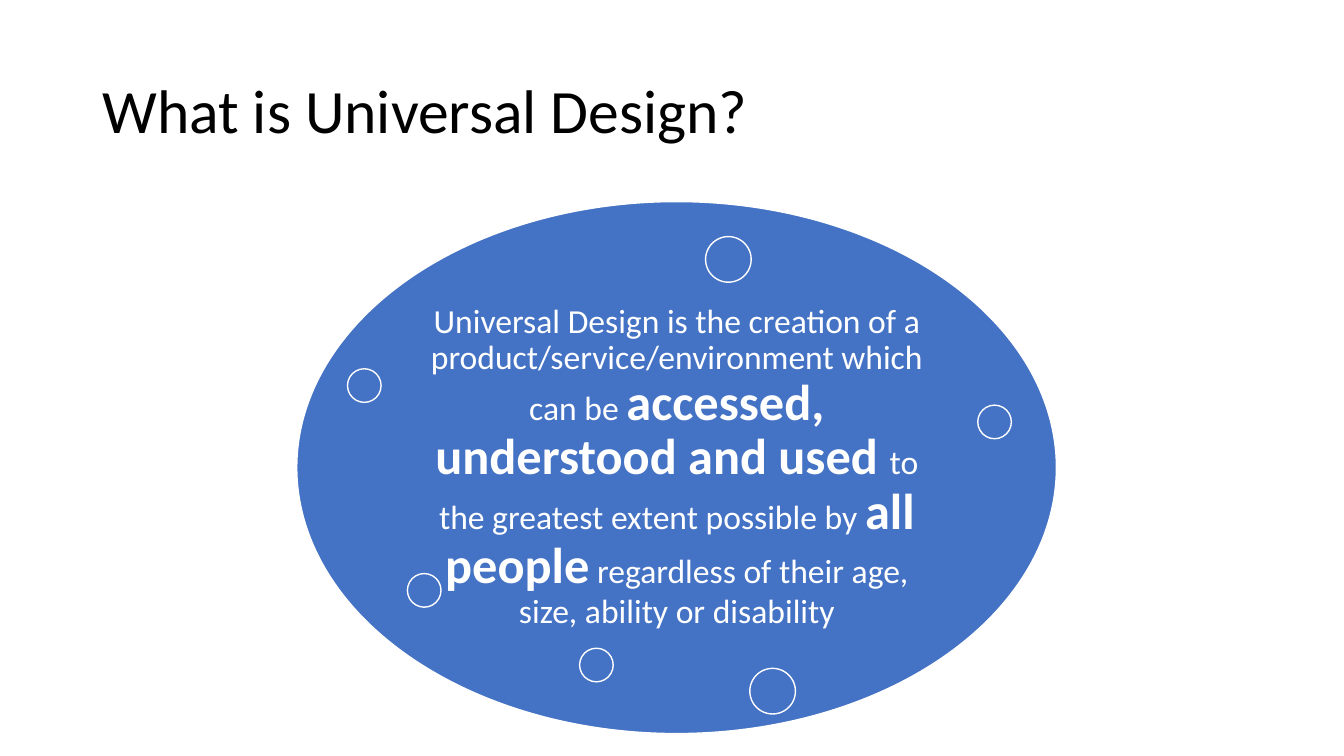
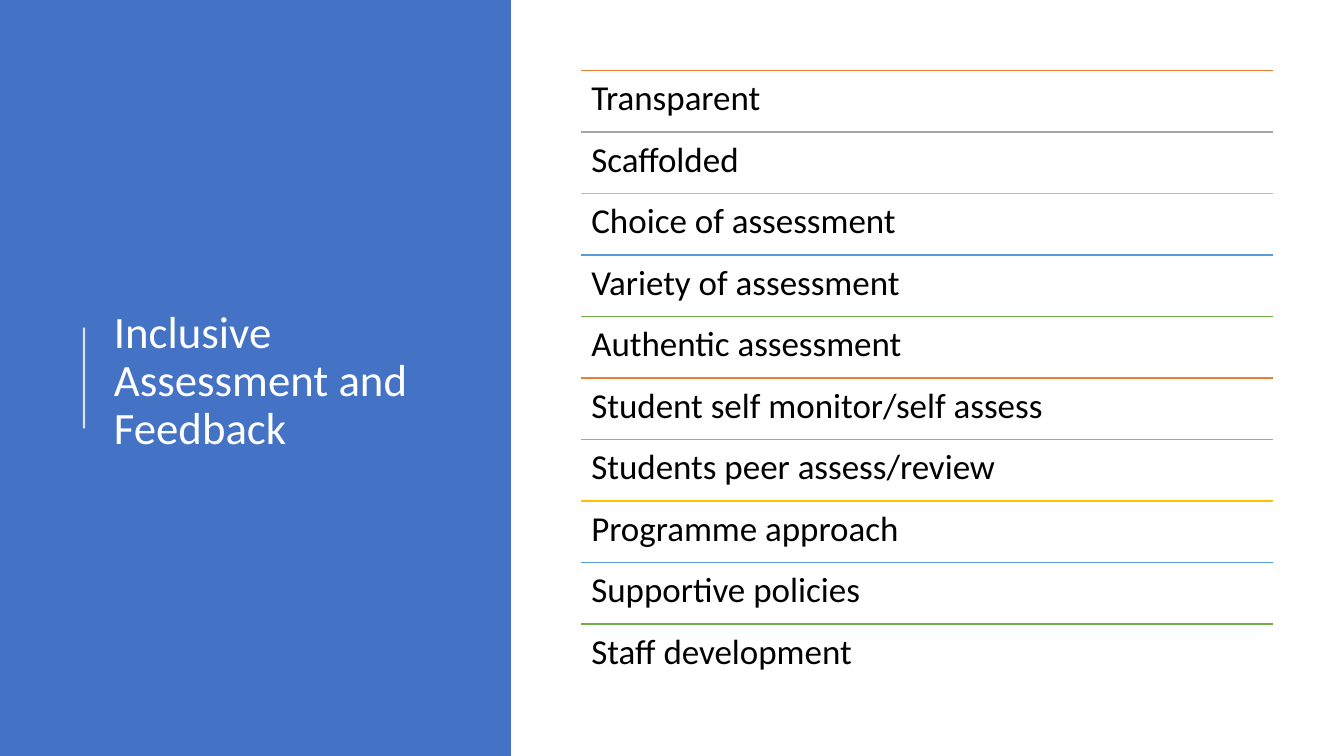
from dataclasses import dataclass

import lxml.etree
import pptx
import pptx.dml.color
import pptx.enum.shapes
import pptx.enum.text
import pptx.oxml.ns
import pptx.presentation
import pptx.shapes.autoshape
import pptx.shapes.connector
import pptx.slide
import pptx.text.text
import pptx.util

Pt = pptx.util.Pt
RGBColor = pptx.dml.color.RGBColor
Shape = pptx.shapes.autoshape.Shape
Slide = pptx.slide.Slide
MSO_SHAPE = pptx.enum.shapes.MSO_SHAPE
MSO_ANCHOR = pptx.enum.text.MSO_ANCHOR
PP_ALIGN = pptx.enum.text.PP_ALIGN
qn = pptx.oxml.ns.qn

FONT = "Calibri"
LINE_SPACING = 0.9
TEXT_INSET = 7.2
TITLE_ONLY_LAYOUT = 5

BLACK = RGBColor(0x00, 0x00, 0x00)
WHITE = RGBColor(0xFF, 0xFF, 0xFF)
BLUE = RGBColor(0x44, 0x72, 0xC4)
ORANGE = RGBColor(0xED, 0x7D, 0x31)
GREY = RGBColor(0xA5, 0xA5, 0xA5)
GOLD = RGBColor(0xFF, 0xC0, 0x00)
SKY = RGBColor(0x5B, 0x9B, 0xD5)
GREEN = RGBColor(0x70, 0xAD, 0x47)
RULE_COLOURS = (ORANGE, GREY, GOLD, SKY, GREEN)


@dataclass(frozen=True)
class Frame:
    """A rectangle in points."""

    left: float
    top: float
    width: float
    height: float

    def lengths(self) -> tuple[pptx.util.Length, ...]:
        return Pt(self.left), Pt(self.top), Pt(self.width), Pt(self.height)


@dataclass(frozen=True)
class Phrase:
    text: str
    size: float
    bold: bool = False


SMALL_BUBBLE = 24
LARGE_BUBBLE = 32.6
BUBBLES = (
    Frame(504, 169, LARGE_BUBBLE, LARGE_BUBBLE),
    Frame(414, 463, SMALL_BUBBLE, SMALL_BUBBLE),
    Frame(698.4, 289.4, SMALL_BUBBLE, SMALL_BUBBLE),
    Frame(535.6, 477.4, LARGE_BUBBLE, LARGE_BUBBLE),
    Frame(248.2, 263.4, SMALL_BUBBLE, SMALL_BUBBLE),
    Frame(291, 409.7, SMALL_BUBBLE, SMALL_BUBBLE),
)

DEFINITION = (
    Phrase("Universal Design is the creation of a product/service/environment which can be ", 24),
    Phrase("accessed, understood and used ", 36, True),
    Phrase("to the greatest extent possible by ", 24),
    Phrase("all people", 36, True),
    Phrase(" regardless of their age, size, ability or disability", 24),
)

PRACTICES = (
    "Transparent",
    "Scaffolded",
    "Choice of assessment",
    "Variety of assessment",
    "Authentic assessment",
    "Student self monitor/self assess",
    "Students peer assess/review",
    "Programme approach",
    "Supportive policies",
    "Staff development",
)
PRACTICE_LEFT = 415.3
PRACTICE_TOP = 50.4
PRACTICE_WIDTH = 494
PRACTICE_HEIGHT = 43.92


def style_paragraph(para: pptx.text.text._Paragraph, colour: RGBColor, align: PP_ALIGN) -> None:
    para.alignment = align
    para.line_spacing = LINE_SPACING
    para.font.name = FONT
    para.font.color.rgb = colour


def add_titled_slide(
    deck: pptx.presentation.Presentation, text: str, frame: Frame, size: float, colour: RGBColor
) -> Slide:
    slide = deck.slides.add_slide(deck.slide_layouts[TITLE_ONLY_LAYOUT])
    title = slide.shapes.title
    title.left, title.top, title.width, title.height = frame.lengths()
    title.text_frame.text = text
    title.text_frame.word_wrap = True
    title.text_frame.auto_size = pptx.enum.text.MSO_AUTO_SIZE.NONE
    title.text_frame.vertical_anchor = MSO_ANCHOR.MIDDLE
    para = title.text_frame.paragraphs[0]
    style_paragraph(para, colour, PP_ALIGN.LEFT)
    para.font.size = Pt(size)
    return slide


def add_blue_shape(slide: Slide, kind: MSO_SHAPE, frame: Frame, outlined: bool) -> Shape:
    shape = slide.shapes.add_shape(kind, *frame.lengths())
    shape.shadow.inherit = False
    shape.fill.solid()
    shape.fill.fore_color.rgb = BLUE
    if outlined:
        shape.line.color.rgb = WHITE
        shape.line.width = Pt(1)
    else:
        shape.line.fill.background()
    return shape


def add_text(
    slide: Slide,
    phrases: tuple[Phrase, ...],
    frame: Frame,
    colour: RGBColor,
    align: PP_ALIGN = PP_ALIGN.LEFT,
    anchor: MSO_ANCHOR = MSO_ANCHOR.TOP,
) -> None:
    box = slide.shapes.add_textbox(*frame.lengths())
    body = box.text_frame
    body.word_wrap = True
    body.vertical_anchor = anchor
    body.margin_left = body.margin_right = Pt(TEXT_INSET)
    body.margin_top = body.margin_bottom = Pt(TEXT_INSET)
    para = body.paragraphs[0]
    style_paragraph(para, colour, align)
    for phrase in phrases:
        span = para.add_run()
        span.text = phrase.text
        span.font.size = Pt(phrase.size)
        span.font.bold = phrase.bold


def add_line(
    slide: Slide, start: tuple[float, float], end: tuple[float, float], colour: RGBColor, width: float
) -> pptx.shapes.connector.Connector:
    line = slide.shapes.add_connector(
        pptx.enum.shapes.MSO_CONNECTOR.STRAIGHT, *map(Pt, start), *map(Pt, end)
    )
    line.line.color.rgb = colour
    line.line.width = Pt(width)
    lxml.etree.SubElement(line.element.spPr, qn("a:effectLst"))
    return line


def set_opacity(line: pptx.shapes.connector.Connector, percent: int) -> None:
    colour = line.element.spPr.find(".//" + qn("a:srgbClr"))
    lxml.etree.SubElement(colour, qn("a:alpha")).set("val", str(percent * 1000))


def build_definition_slide(deck: pptx.presentation.Presentation) -> None:
    slide = add_titled_slide(deck, "What is Universal Design?", Frame(66, 28.75, 828, 104.4), 44, BLACK)
    add_blue_shape(slide, MSO_SHAPE.OVAL, Frame(212, 144, 542.6, 380), True)
    add_text(
        slide, DEFINITION, Frame(291.6, 199.4, 383.8, 269.3), WHITE, PP_ALIGN.CENTER, MSO_ANCHOR.MIDDLE
    )
    for bubble in BUBBLES:
        add_blue_shape(slide, MSO_SHAPE.OVAL, bubble, True)


def build_assessment_slide(deck: pptx.presentation.Presentation) -> None:
    slide = add_titled_slide(
        deck, "Inclusive Assessment and Feedback", Frame(74.2, 56.2, 265.7, 433.4), 32, WHITE
    )
    panel = add_blue_shape(slide, MSO_SHAPE.RECTANGLE, Frame(0, 0, 365, 540), False)
    slide.shapes.title.element.addprevious(panel.element)
    set_opacity(add_line(slide, (60, 306), (60, 234), WHITE, 1.5), 80)
    for index, practice in enumerate(PRACTICES):
        top = PRACTICE_TOP + index * PRACTICE_HEIGHT
        colour = RULE_COLOURS[index % len(RULE_COLOURS)]
        add_line(slide, (PRACTICE_LEFT, top), (PRACTICE_LEFT + PRACTICE_WIDTH, top), colour, 1)
        frame = Frame(PRACTICE_LEFT, top, PRACTICE_WIDTH, PRACTICE_HEIGHT)
        add_text(slide, (Phrase(practice, 25),), frame, BLACK)


def main() -> None:
    deck = pptx.Presentation()
    deck.slide_width, deck.slide_height = Pt(960), Pt(540)
    build_definition_slide(deck)
    build_assessment_slide(deck)
    deck.save("out.pptx")


if __name__ == "__main__":
    main()
